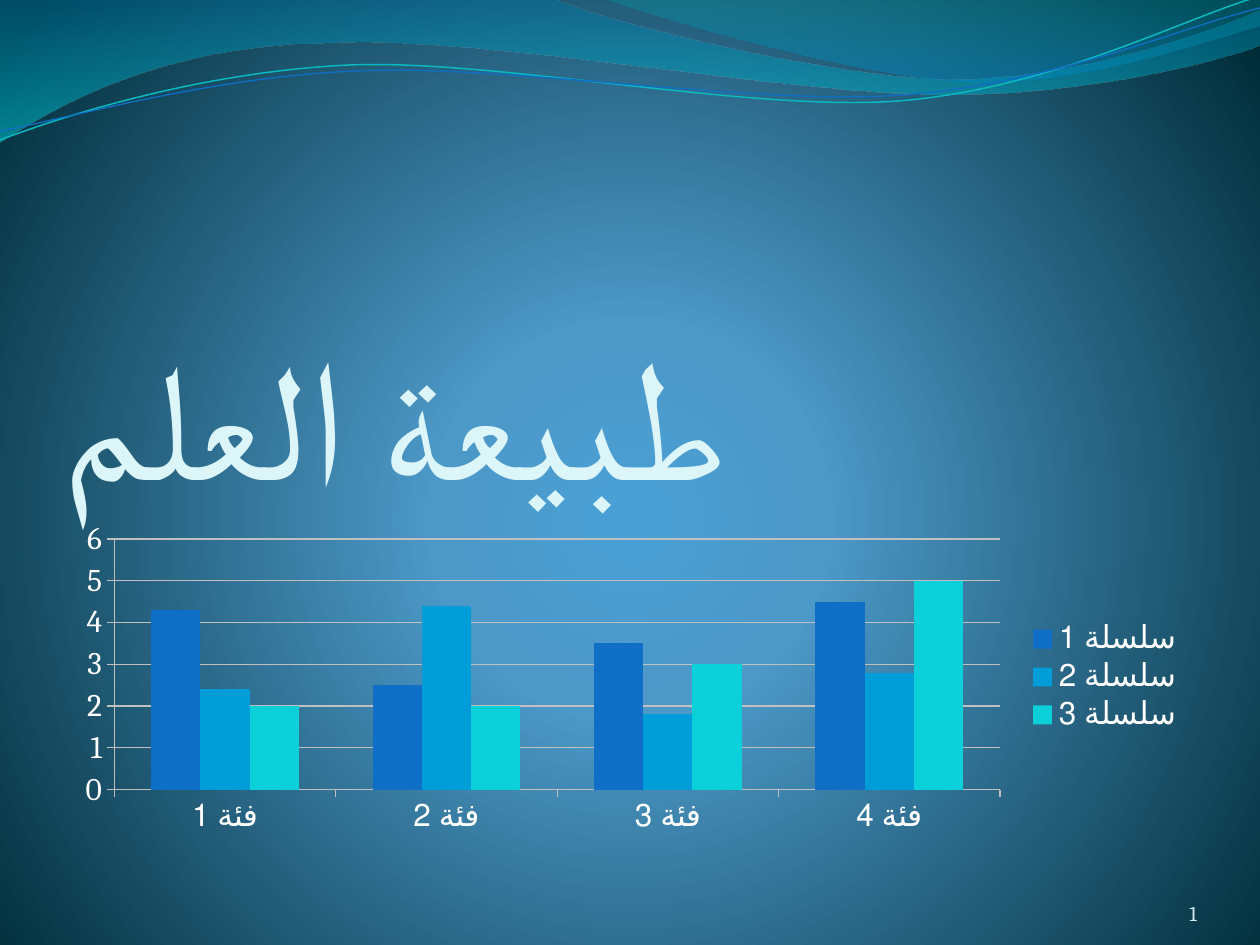
import pptx
import pptx.chart.data
import pptx.dml.color
import pptx.enum.chart
import pptx.enum.text
import pptx.oxml
import pptx.oxml.ns
import pptx.util

SCALE = 914400 / 126
COLORS = {
    "glow": "4AA0D6", "sky": "4C98C7", "night": "002C38",
    "sea": "0074A1", "teal": "00C6CF", "green": "00A1A9", "azure": "008BBF",
    "aqua": "0AB8BF", "blue": "0F6FC6", "cyan": "009DD9", "mint": "0BD0D9",
    "title": "DBF5F9", "page": "D1EAEE", "white": "FFFFFF", "grid": "C0C0C0",
}
DOWN = '<a:lin ang="5400000" scaled="0"/>'
ROUND = ('<a:path path="circle"><a:fillToRect l="10000" t="110000" '
         'r="10000" b="100000"/></a:path>')
SPACE = pptx.oxml.ns.nsdecls("a")


def emu(px):
    return pptx.util.Emu(round(px * SCALE))


def rgb(name):
    return pptx.dml.color.RGBColor.from_string(COLORS[name])


def blend(fill, props, stops, shade):
    """Give a fill a gradient of (percent, colour, opacity) stops."""
    fill.gradient()
    old = props.find(pptx.oxml.ns.qn("a:gradFill"))
    marks = "".join(
        f'<a:gs pos="{pos * 1000}"><a:srgbClr val="{COLORS[name]}">'
        f'<a:alpha val="{alpha * 1000}"/></a:srgbClr></a:gs>'
        for pos, name, alpha in stops)
    props.replace(old, pptx.oxml.parse_xml(
        f'<a:gradFill {SPACE} rotWithShape="1"><a:gsLst>{marks}</a:gsLst>'
        f'{shade}</a:gradFill>'))


class Deck:
    font = "Cambria"

    def __init__(self, width, height):
        self.show = pptx.Presentation()
        self.show.slide_width = emu(width)
        self.show.slide_height = emu(height)
        self.slide = self.show.slides.add_slide(self.show.slide_layouts[6])

    def back(self, stops):
        fill = self.slide.background.fill
        fill.solid()
        props = self.slide.element.cSld.find(".//" + pptx.oxml.ns.qn("p:bgPr"))
        blend(fill, props, stops, ROUND)

    def trace(self, parts, close):
        """Draw an outline: two numbers are a point, six a cubic curve."""
        spots = [(emu(part[i]), emu(part[i + 1]))
                 for part in parts for i in range(0, len(part), 2)]
        pen = self.slide.shapes.build_freeform(*spots[0], scale=1.0)
        pen.add_line_segments(spots[1:], close=close)
        shape = pen.convert_to_shape()
        shape.shadow.inherit = False
        outline = shape.element.find(".//" + pptx.oxml.ns.qn("a:path"))
        lines = iter(outline.findall(pptx.oxml.ns.qn("a:lnTo")))
        for part in parts[1:]:
            line = next(lines)
            if len(part) == 6:
                bend = pptx.oxml.parse_xml(f"<a:cubicBezTo {SPACE}/>")
                outline.replace(line, bend)
                bend.append(line[0])
                for _ in range(2):
                    line = next(lines)
                    outline.remove(line)
                    bend.append(line[0])
        return shape

    def wave(self, parts, stops):
        shape = self.trace(parts, True)
        shape.line.fill.background()
        blend(shape.fill, shape.element.spPr, stops, DOWN)

    def line(self, parts, color, width):
        shape = self.trace(parts, False)
        shape.fill.background()
        shape.line.color.rgb = rgb(color)
        shape.line.width = pptx.util.Pt(width)

    def text(self, box, words, size, color, font, align, top=0):
        """Add one right-to-left line that sits at the foot of its box."""
        frame = self.slide.shapes.add_textbox(*map(emu, box)).text_frame
        frame.word_wrap = True
        frame.vertical_anchor = pptx.enum.text.MSO_ANCHOR.BOTTOM
        frame.margin_left = frame.margin_right = frame.margin_bottom = 0
        frame.margin_top = emu(top)
        frame.text = words
        para = frame.paragraphs[0]
        para.alignment = align
        para._p.get_or_add_pPr().set("rtl", "1")
        run = para.runs[0]
        run.font.size = pptx.util.Pt(size)
        run.font.name = font
        run.font.color.rgb = rgb(color)
        run._r.get_or_add_rPr().append(
            pptx.oxml.parse_xml(f'<a:cs {SPACE} typeface="{font}"/>'))

    def chart(self, box, cats, series, size):
        data = pptx.chart.data.CategoryChartData()
        data.categories = cats
        for name, vals, _ in series:
            data.add_series(name, vals)
        kind = pptx.enum.chart.XL_CHART_TYPE.COLUMN_CLUSTERED
        chart = self.slide.shapes.add_chart(kind, *map(emu, box), data).chart
        chart.font.size = pptx.util.Pt(size)
        chart.font.name = self.font
        chart.font.color.rgb = rgb("white")
        chart.has_title = False
        chart.has_legend = True
        chart.legend.position = pptx.enum.chart.XL_LEGEND_POSITION.RIGHT
        chart.legend.include_in_layout = False
        axes = (chart.category_axis, chart.value_axis)
        for axis in axes:
            axis.major_tick_mark = pptx.enum.chart.XL_TICK_MARK.OUTSIDE
        chart.value_axis.has_major_gridlines = True
        for item in (*axes, chart.value_axis.major_gridlines):
            item.format.line.color.rgb = rgb("grid")
        plot = chart.plots[0]
        plot.gap_width = 150
        plot.vary_by_categories = False
        for bars, (_, _, color) in zip(plot.series, series):
            bars.format.fill.solid()
            bars.format.fill.fore_color.rgb = rgb(color)


def main():
    deck = Deck(1260, 945)
    align = pptx.enum.text.PP_ALIGN
    deck.back([(0, "glow", 100), (25, "sky", 100), (100, "night", 100)])

    deck.wave([(0, 0), (554, -1), (600, 21, 837, 79, 955, 79),
               (1075, 79, 1207, 33, 1260, 11), (1261, 45),
               (1239, 55, 1096, 96, 940, 94), (784, 94, 481, 35, 324, 43),
               (163, 45, 58, 105, -1, 142)],
              [(0, "sea", 45), (100, "teal", 55)])
    deck.wave([(604, -1), (641, 14, 859, 78, 969, 82),
               (1079, 86, 1211, 40, 1260, 26), (1260, 0)],
              [(0, "green", 30), (80, "azure", 45)])
    deck.line([(0, 140), (60, 117, 199, 72, 349, 65),
               (498, 59, 747, 112, 898, 101),
               (1050, 89, 1182, 19, 1257, -3)], "aqua", 0.85)
    deck.line([(0, 131), (59, 121, 207, 77, 357, 71),
               (508, 64, 752, 106, 903, 95),
               (1053, 84, 1185, 26, 1260, 8)], "blue", 0.75)

    deck.text((63, 32, 1134, 482), "طبيعة العلم", 96, "title", "Calibri",
              align.LEFT, top=6)
    deck.chart((63, 514, 1134, 326), [f"فئة {n}" for n in range(1, 5)], [
        ("سلسلة 1", (4.3, 2.5, 3.5, 4.5), "blue"),
        ("سلسلة 2", (2.4, 4.4, 1.8, 2.8), "cyan"),
        ("سلسلة 3", (2, 2, 3, 5), "mint"),
    ], 18)
    deck.text((1092, 876, 105, 50), "1", 12, "page", deck.font, align.RIGHT)
    deck.show.save("out.pptx")


if __name__ == "__main__":
    main()
